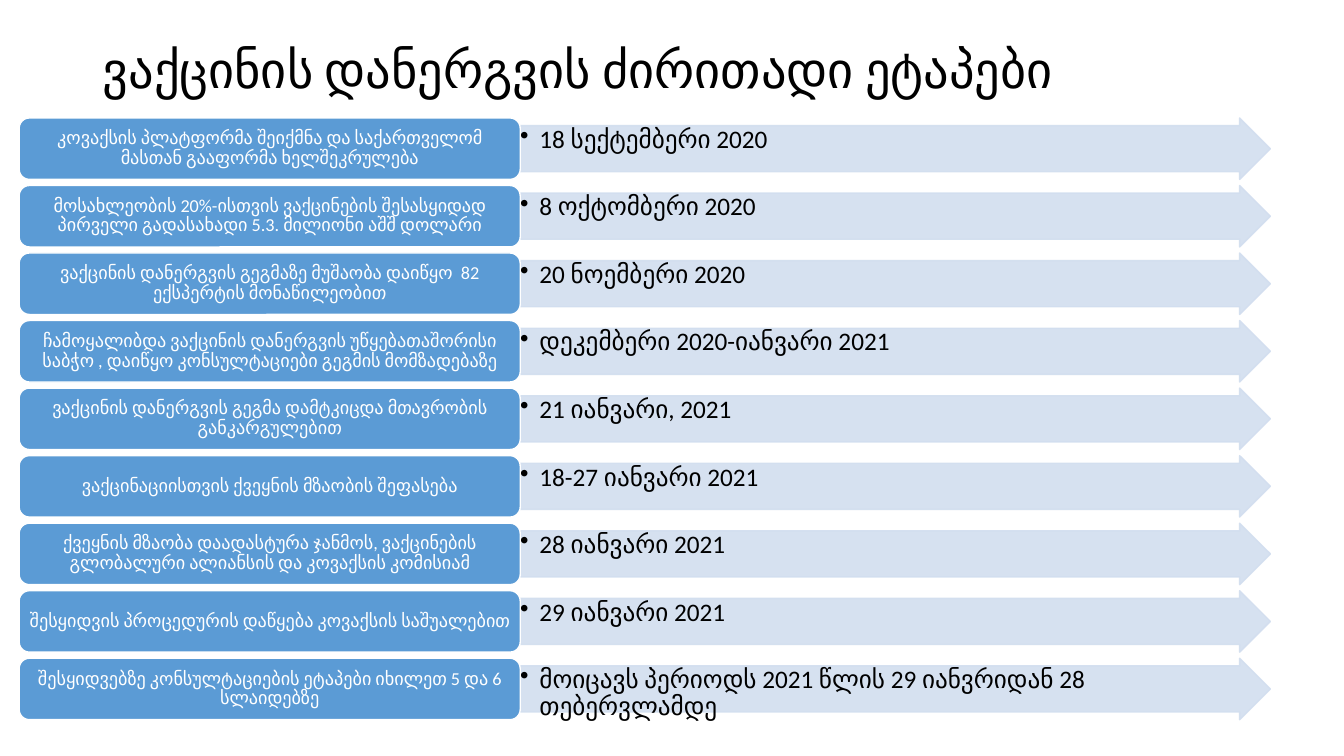
from dataclasses import dataclass

from lxml import etree
from pptx import Presentation
from pptx.dml.color import RGBColor
from pptx.enum.shapes import MSO_SHAPE
from pptx.enum.text import MSO_ANCHOR, PP_ALIGN
from pptx.oxml.ns import qn
from pptx.util import Pt

TITLE = "ვაქცინის დანერგვის ძირითადი ეტაპები"
STAGES = [
    ("კოვაქსის პლატფორმა შეიქმნა და საქართველომ მასთან გააფორმა ხელშეკრულება",
     "18 სექტემბერი 2020"),
    ("მოსახლეობის 20%-ისთვის ვაქცინების შესასყიდად პირველი გადასახადი 5.3. მილიონი აშშ დოლარი",
     "8 ოქტომბერი 2020"),
    ("ვაქცინის დანერგვის გეგმაზე მუშაობა დაიწყო  82 ექსპერტის მონაწილეობით",
     "20 ნოემბერი 2020"),
    ("ჩამოყალიბდა ვაქცინის დანერგვის უწყებათაშორისი საბჭო , დაიწყო კონსულტაციები გეგმის მომზადებაზე",
     "დეკემბერი 2020-იანვარი 2021"),
    ("ვაქცინის დანერგვის გეგმა დამტკიცდა მთავრობის განკარგულებით",
     "21 იანვარი, 2021"),
    ("ვაქცინაციისთვის ქვეყნის მზაობის შეფასება",
     "18-27 იანვარი 2021"),
    ("ქვეყნის მზაობა დაადასტურა ჯანმოს, ვაქცინების გლობალური ალიანსის და კოვაქსის კომისიამ",
     "28 იანვარი 2021"),
    ("შესყიდვის პროცედურის დაწყება კოვაქსის საშუალებით",
     "29 იანვარი 2021"),
    ("შესყიდვებზე კონსულტაციების ეტაპები იხილეთ 5 და 6 სლაიდებზე",
     "მოიცავს პერიოდს 2021 წლის 29 იანვრიდან 28 თებერვლამდე"),
]


@dataclass(frozen=True)
class Theme:
    font: str = "Calibri"
    black: RGBColor = RGBColor(0x00, 0x00, 0x00)
    white: RGBColor = RGBColor(0xFF, 0xFF, 0xFF)
    blue: RGBColor = RGBColor(0x5B, 0x9B, 0xD5)
    pale: RGBColor = RGBColor(0xD2, 0xDE, 0xEF)
    title_size: int = 36
    date_size: int = 18
    stage_size: int = 13


THEME = Theme()
ARROW = MSO_SHAPE.RIGHT_ARROW
ROUNDED = MSO_SHAPE.ROUNDED_RECTANGLE
TOP, MIDDLE = MSO_ANCHOR.TOP, MSO_ANCHOR.MIDDLE
LEFT, CENTER = PP_ALIGN.LEFT, PP_ALIGN.CENTER

PX = 9144
PAGE_WIDTH, PAGE_HEIGHT = 1333, 750
TITLE_BOX = (92, 40, 1150, 64)
STAGE_LEFT, STAGE_WIDTH = 19, 497
DATE_LEFT, DATE_WIDTH = 515, 745
FIRST_TOP, ROW_HEIGHT, ROW_STEP = 117, 61, 67
BULLET_INDENT = 19


def scaled(lengths):
    return [length * PX for length in lengths]


def write(shape, text, size, color, align, anchor, insets):
    frame = shape.text_frame
    frame.word_wrap = True
    frame.vertical_anchor = anchor
    (frame.margin_left, frame.margin_top,
     frame.margin_right, frame.margin_bottom) = scaled(insets)
    para = frame.paragraphs[0]
    para.text = text
    para.alignment = align
    para.line_spacing = 0.9
    para.font.name = THEME.font
    para.font.size = Pt(size)
    para.font.color.rgb = color
    return para


def add_panel(page, preset, area, fill, line):
    panel = page.shapes.add_shape(preset, *scaled(area))
    panel.shadow.inherit = False
    panel.fill.solid()
    panel.fill.fore_color.rgb = fill
    panel.line.color.rgb = line
    panel.line.width = Pt(1)
    return panel


def add_bullet(para):
    properties = para._p.get_or_add_pPr()
    properties.set("marL", str(BULLET_INDENT * PX))
    properties.set("indent", str(-BULLET_INDENT * PX))
    etree.SubElement(properties, qn("a:buChar")).set("char", "•")
    properties.append(properties.find(qn("a:defRPr")))


def add_date(page, text, top):
    arrow = add_panel(page, ARROW, (DATE_LEFT, top, DATE_WIDTH, ROW_HEIGHT),
                      THEME.pale, THEME.pale)
    arrow.adjustments[0] = 0.75
    arrow.adjustments[1] = 0.5
    for color in arrow._element.spPr.iter(qn("a:srgbClr")):
        etree.SubElement(color, qn("a:alpha")).set("val", "90000")
    add_bullet(write(arrow, text, THEME.date_size, THEME.black, LEFT, TOP, (1, 1, 16, 1)))


def add_stage(page, text, top):
    box = add_panel(page, ROUNDED, (STAGE_LEFT, top, STAGE_WIDTH, ROW_HEIGHT),
                    THEME.blue, THEME.white)
    write(box, text, THEME.stage_size, THEME.white, CENTER, MIDDLE, (5, 3, 5, 3))


def main():
    deck = Presentation()
    deck.slide_width, deck.slide_height = scaled((PAGE_WIDTH, PAGE_HEIGHT))
    page = deck.slides.add_slide(deck.slide_layouts[6])
    title = page.shapes.add_textbox(*scaled(TITLE_BOX))
    write(title, TITLE, THEME.title_size, THEME.black, LEFT, MIDDLE, (10, 5, 10, 5))
    for row, (stage, date) in enumerate(STAGES):
        top = FIRST_TOP + row * ROW_STEP
        add_date(page, date, top)
        add_stage(page, stage, top)
    deck.save("out.pptx")


if __name__ == "__main__":
    main()
